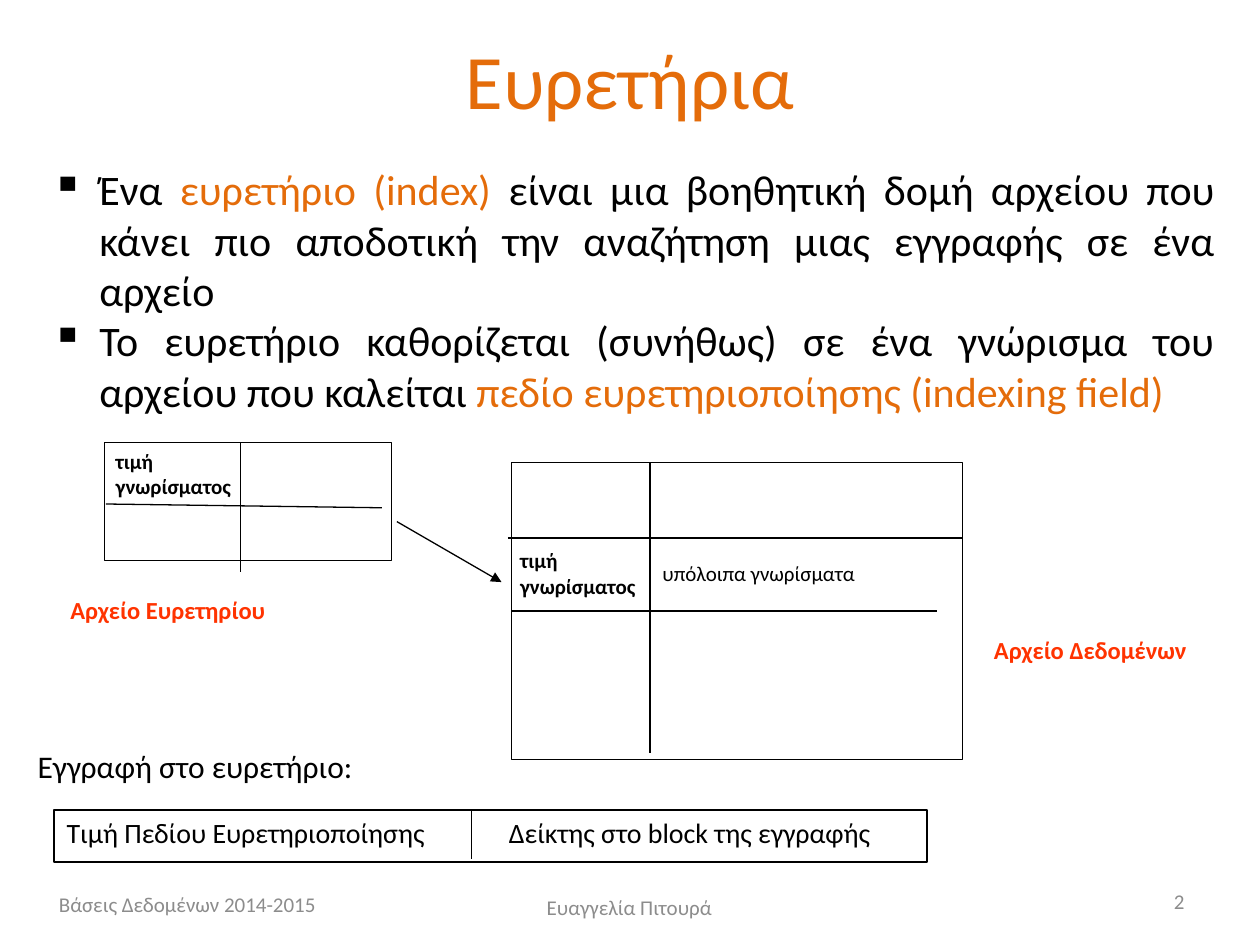
"""Build a slide that explains index files and data files."""
from dataclasses import dataclass

from lxml import etree
from pptx import Presentation
from pptx.dml.color import RGBColor
from pptx.enum.shapes import MSO_CONNECTOR, MSO_SHAPE
from pptx.enum.text import MSO_ANCHOR, PP_ALIGN
from pptx.oxml.ns import qn
from pptx.util import Emu, Pt

LEFT, MID, RIGHT, FULL = PP_ALIGN.LEFT, PP_ALIGN.CENTER, PP_ALIGN.RIGHT, PP_ALIGN.JUSTIFY
TOP, CENTRE = MSO_ANCHOR.TOP, MSO_ANCHOR.MIDDLE
RECT, STRAIGHT = MSO_SHAPE.RECTANGLE, MSO_CONNECTOR.STRAIGHT
SCALE = 9144
FONT = "Calibri"
COLOURS = {"ink": "000000", "orange": "E46C0A", "red": "FF3300", "grey": "8C8C8C"}


@dataclass
class Box:
    x: int
    y: int
    w: int
    h: int
    weight: float = 0.75


@dataclass
class Label:
    text: str
    x: int
    y: int
    w: int
    h: int
    size: int = 12
    colour: str = "ink"
    bold: bool = False
    align: PP_ALIGN = LEFT
    anchor: MSO_ANCHOR = TOP
    wrap: bool = True


@dataclass
class Line:
    x1: int
    y1: int
    x2: int
    y2: int
    arrow: bool = False


INDEX = Box(83, 351, 228, 94)
DATA = Box(406, 367, 358, 236)
ENTRY = Box(43, 643, 693, 41, 1)
KEY = "τιμή γνωρίσματος"

LABELS = [
    Label("Αρχείο Ευρετηρίου", 46, 467, 228, 33, 14, "red", True),
    Label("Αρχείο Δεδομένων", 779, 499, 210, 33, 14, "red", True),
    Label(KEY, 82, 351, 126, 50, bold=True),
    Label(KEY, 403, 430, 134, 50, bold=True),
    Label("υπόλοιπα γνωρίσματα", 516, 440, 284, 30),
    Label("Τιμή Πεδίου Ευρετηριοποίησης", 43, 642, 309, 37, 16, wrap=False),
    Label("Δείκτης στο block της εγγραφής", 394, 642, 312, 37, 16, wrap=False),
    Label("Εγγραφή στο ευρετήριο:", 20, 588, 591, 40, 18),
    Label("Βάσεις Δεδομένων 2014-2015", 37, 700, 233, 35, colour="grey", anchor=CENTRE),
    Label("Ευαγγελία Πιτουρά", 341, 700, 317, 40, colour="grey", align=MID, anchor=CENTRE),
    Label("2", 717, 695, 233, 40, colour="grey", align=RIGHT, anchor=CENTRE),
]

LINES = [
    Line(84, 400, 303, 403),
    Line(191, 351, 191, 454),
    Line(315, 414, 398, 462, True),
    Line(516, 367, 516, 598),
    Line(403, 427, 764, 427),
    Line(374, 643, 374, 682),
]

POINTS = [
    [
        ("Ένα ", "ink"),
        ("ευρετήριο (index) ", "orange"),
        ("είναι μια βοηθητική δομή αρχείου που κάνει πιο αποδοτική "
         "την αναζήτηση μιας εγγραφής σε ένα αρχείο", "ink"),
    ],
    [
        ("Το ευρετήριο καθορίζεται (συνήθως) σε ένα γνώρισμα του "
         "αρχείου που καλείται ", "ink"),
        ("πεδίο ευρετηριοποίησης (indexing field)", "orange"),
    ],
]


def px(*vals: int) -> list[Emu]:
    """Turn px into EMU."""
    return [Emu(v * SCALE) for v in vals]


def tint(name: str) -> RGBColor:
    """Look up a colour by name."""
    return RGBColor.from_string(COLOURS[name])


def add_run(para, text: str, size: int, colour: str, bold: bool = False) -> None:
    """Add one styled run to a paragraph."""
    run = para.add_run()
    run.text = text
    font = run.font
    font.name, font.size, font.bold = FONT, Pt(size), bold
    font.color.rgb = tint(colour)


def add_label(slide, item: Label) -> None:
    """Draw a text box with one run."""
    frame = slide.shapes.add_textbox(*px(item.x, item.y, item.w, item.h)).text_frame
    frame.word_wrap = item.wrap
    frame.vertical_anchor = item.anchor
    para = frame.paragraphs[0]
    para.alignment = item.align
    add_run(para, item.text, item.size, item.colour, item.bold)


def add_box(slide, box: Box):
    """Draw an outlined rectangle."""
    shape = slide.shapes.add_shape(RECT, *px(box.x, box.y, box.w, box.h))
    shape.shadow.inherit = False
    shape.fill.background()
    shape.line.color.rgb = tint("ink")
    shape.line.width = Pt(box.weight)
    return shape


def add_line(slide, item: Line):
    """Draw a straight line, with an arrowhead on request."""
    line = slide.shapes.add_connector(STRAIGHT, *px(item.x1, item.y1, item.x2, item.y2))
    line.line.color.rgb = tint("ink")
    line.line.width = Pt(0.75)
    props = line._element.spPr
    if item.arrow:
        etree.SubElement(props.find(qn("a:ln")), qn("a:tailEnd"), type="triangle")
    etree.SubElement(props, qn("a:effectLst"))
    return line


def add_bullet(para) -> None:
    """Give a paragraph a hanging square bullet."""
    props = para._p.get_or_add_pPr()
    props.set("marL", str(38 * SCALE))
    props.set("indent", str(-38 * SCALE))
    hue = etree.SubElement(props, qn("a:buClr"))
    etree.SubElement(hue, qn("a:srgbClr"), val=COLOURS["ink"])
    etree.SubElement(props, qn("a:buSzPct"), val="105000")
    etree.SubElement(props, qn("a:buChar"), char="▪")


def add_points(slide) -> None:
    """Draw the bulleted text."""
    frame = slide.shapes.add_textbox(*px(31, 125, 943, 212)).text_frame
    frame.word_wrap = True
    for i, runs in enumerate(POINTS):
        para = frame.add_paragraph() if i else frame.paragraphs[0]
        para.alignment = FULL
        add_bullet(para)
        for text, colour in runs:
            add_run(para, text, 24, colour)


def set_title(slide) -> None:
    """Place and fill the title."""
    title = slide.shapes.title
    title.left, title.top, title.width, title.height = px(50, 0, 900, 125)
    title.text_frame.vertical_anchor = CENTRE
    para = title.text_frame.paragraphs[0]
    para.alignment = MID
    add_run(para, "Ευρετήρια", 44, "orange")


def main() -> None:
    """Build and save the slide."""
    deck = Presentation()
    deck.slide_width, deck.slide_height = px(1000, 750)
    slide = deck.slides.add_slide(deck.slide_layouts[5])
    set_title(slide)
    add_points(slide)
    add_box(slide, INDEX)
    data = add_box(slide, DATA)
    add_box(slide, ENTRY)
    for item in LINES:
        add_line(slide, item)
    add_line(slide, Line(406, 485, 744, 485)).begin_connect(data, 1)
    for item in LABELS:
        add_label(slide, item)
    deck.save("out.pptx")


if __name__ == "__main__":
    main()
